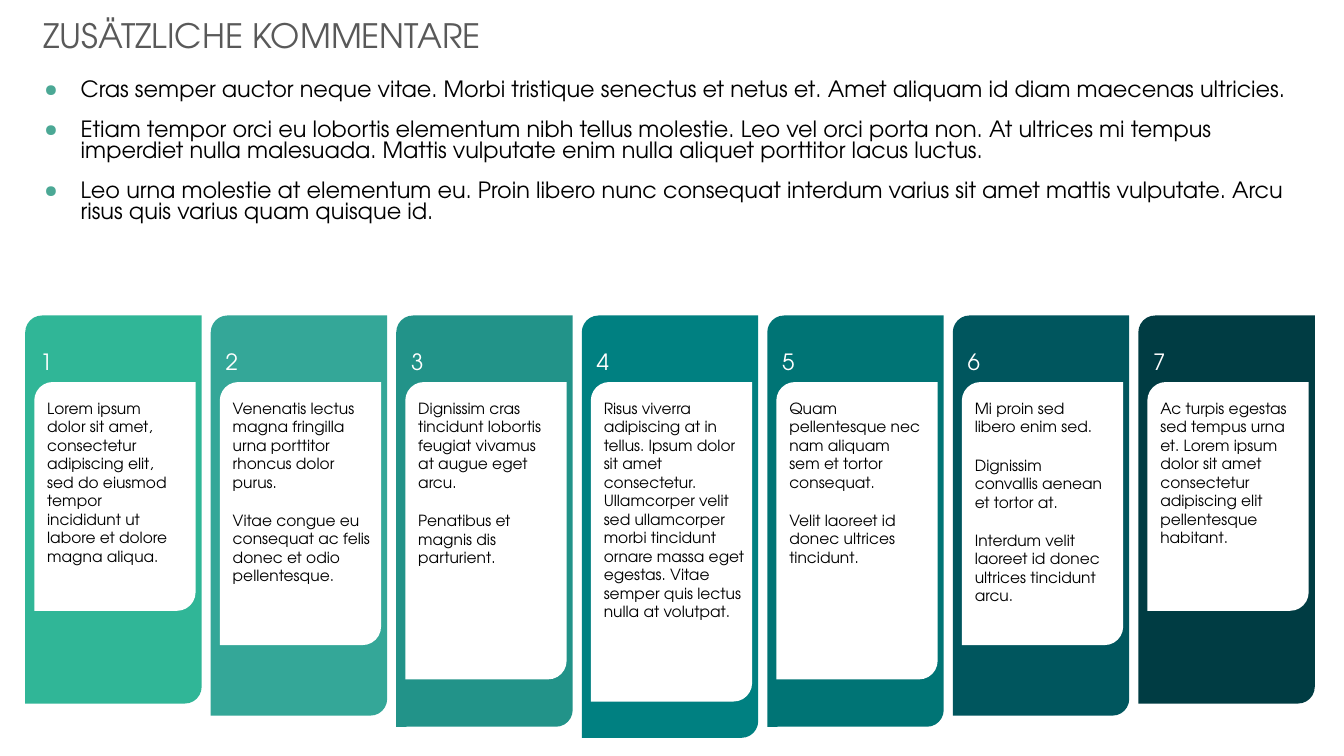
from dataclasses import dataclass

from lxml.etree import SubElement
from pptx import Presentation
from pptx.dml.color import RGBColor
from pptx.enum.shapes import MSO_SHAPE
from pptx.enum.text import MSO_ANCHOR, MSO_AUTO_SIZE, PP_ALIGN
from pptx.oxml.ns import qn
from pptx.util import Inches, Pt


@dataclass(frozen=True)
class Theme:
    font: str = "TeX Gyre Adventor"
    title: str = "595959"
    body: str = "000000"
    white: str = "FFFFFF"
    bullet: str = "4BA895"
    title_size: int = 24
    body_size: int = 16
    card_size: int = 11
    gap: int = 14


THEME = Theme()

TITLE = "ZUSÄTZLICHE KOMMENTARE"
COMMENTS = [
    "Cras semper auctor neque vitae. Morbi tristique senectus et netus et. "
    "Amet aliquam id diam maecenas ultricies.",
    "Etiam tempor orci eu lobortis elementum nibh tellus molestie. Leo vel orci porta non. "
    "At ultrices mi tempus imperdiet nulla malesuada. Mattis vulputate enim nulla aliquet "
    "porttitor lacus luctus.",
    "Leo urna molestie at elementum eu. Proin libero nunc consequat interdum varius sit amet "
    "mattis vulputate. Arcu risus quis varius quam quisque id.",
]
# Colour, text width, text height, paragraphs
CARDS = [
    ("30B697", 1.5, 2.15, [
        "Lorem ipsum dolor sit amet, consectetur adipiscing elit, sed do eiusmod tempor "
        "incididunt ut labore et dolore magna aliqua."]),
    ("34A798", 1.58, 2.34, [
        "Venenatis lectus magna fringilla urna porttitor rhoncus dolor purus.",
        "Vitae congue eu consequat ac felis donec et odio pellentesque."]),
    ("229389", 1.47, 1.78, [
        "Dignissim cras tincidunt lobortis feugiat vivamus at augue eget arcu.",
        "Penatibus et magnis dis parturient."]),
    ("008081", 1.6, 2.32, [
        "Risus viverra adipiscing at in tellus. Ipsum dolor sit amet consectetur. Ullamcorper "
        "velit sed ullamcorper morbi tincidunt ornare massa eget egestas. Vitae semper quis "
        "lectus nulla at volutpat."]),
    ("007475", 1.5, 2.16, [
        "Quam pellentesque nec nam aliquam sem et tortor consequat.",
        "Velit laoreet id donec ultrices tincidunt."]),
    ("00565E", 1.5, 2.16, [
        "Mi proin sed libero enim sed.",
        "Dignissim convallis aenean et tortor at.",
        "Interdum velit laoreet id donec ultrices tincidunt arcu."]),
    ("003C43", 1.5, 1.58, [
        "Ac turpis egestas sed tempus urna et. Lorem ipsum dolor sit amet consectetur "
        "adipiscing elit pellentesque habitant."]),
]
# Heights by distance from the middle card
CARD_HEIGHTS = [4.19, 4.08, 3.97, 3.85]
PANEL_HEIGHTS = [3.17, 2.95, 2.61, 2.27]


def set_format(target, **values):
    for name, value in values.items():
        setattr(target, name, value)


def write(tf, texts, size, color, **paragraph_format):
    for i, text in enumerate(texts):
        p = tf.paragraphs[0] if i == 0 else tf.add_paragraph()
        set_format(p, alignment=PP_ALIGN.LEFT, **paragraph_format)
        r = p.add_run()
        r.text = text
        set_format(r.font, name=THEME.font, size=Pt(size), bold=False)
        r.font.color.rgb = RGBColor.from_string(color)


def add_text(s, box, texts, size, color, **paragraph_format):
    tf = s.shapes.add_textbox(*map(Inches, box)).text_frame
    set_format(tf, word_wrap=True, auto_size=MSO_AUTO_SIZE.SHAPE_TO_FIT_TEXT)
    write(tf, texts, size, color, **paragraph_format)


def add_panel(s, box, color, rounding):
    sp = s.shapes.add_shape(MSO_SHAPE.ROUND_2_DIAG_RECTANGLE, *map(Inches, box))
    sp.adjustments[0], sp.adjustments[1] = rounding, 0
    sp.shadow.inherit = False
    sp.fill.solid()
    sp.fill.fore_color.rgb = RGBColor.from_string(color)
    sp.line.fill.background()
    return sp


def add_card(s, box, number, color, panel_height, text_size, texts):
    left, top, width, _ = box
    # Coloured back with its number
    tf = add_panel(s, box, color, 0.095).text_frame
    set_format(tf, word_wrap=True, vertical_anchor=MSO_ANCHOR.TOP,
               margin_left=Inches(0.1), margin_right=Inches(0.1),
               margin_top=Inches(0.28), margin_bottom=Inches(0.05))
    write(tf, [str(number)], THEME.body_size, THEME.white)
    # White panel and its text
    add_panel(s, (left + 0.09, top + 0.66, width - 0.15, panel_height), THEME.white, 0.115)
    add_text(s, (left + 0.12, top + 0.78, *text_size), texts,
             THEME.card_size, THEME.body, space_after=Pt(THEME.gap))


def add_cards(s, left, top, width, pitch):
    middle = len(CARDS) // 2
    for i, (color, text_width, text_height, texts) in enumerate(CARDS):
        step = abs(i - middle)
        add_card(s, (left + i * pitch, top, width, CARD_HEIGHTS[step]), i + 1, color,
                 PANEL_HEIGHTS[step], (text_width, text_height), texts)


def add_bullet(p):
    pPr = p._p.get_or_add_pPr()
    pPr.set("marL", str(Inches(0.5)))
    pPr.set("indent", str(Inches(-0.36)))
    SubElement(SubElement(pPr, qn("a:buClr")), qn("a:srgbClr"), val=THEME.bullet)
    SubElement(pPr, qn("a:buSzPct"), val="75000")
    SubElement(pPr, qn("a:buChar"), char="●")


def add_comments(s, box):
    table = s.shapes.add_table(1, 1, *map(Inches, box)).table
    set_format(table, first_row=False, horz_banding=False)
    cell = table.cell(0, 0)
    cell.fill.background()
    set_format(cell, margin_left=Inches(0.3), margin_right=Inches(0.3),
               margin_top=Inches(0.2), margin_bottom=Inches(0.2))
    write(cell.text_frame, COMMENTS, THEME.body_size, THEME.body, space_after=Pt(THEME.gap))
    for p in cell.text_frame.paragraphs:
        add_bullet(p)


def main():
    prs = Presentation()
    set_format(prs, slide_width=Inches(13.33), slide_height=Inches(7.5))
    s = prs.slides.add_slide(prs.slide_layouts[6])
    add_cards(s, left=0.25, top=3.13, width=1.75, pitch=1.84)
    add_comments(s, (0, 0.6, 13.09, 1.25))
    add_text(s, (0.33, 0.1, 6.88, 0.5), [TITLE], THEME.title_size, THEME.title)
    prs.save("out.pptx")


if __name__ == "__main__":
    main()
